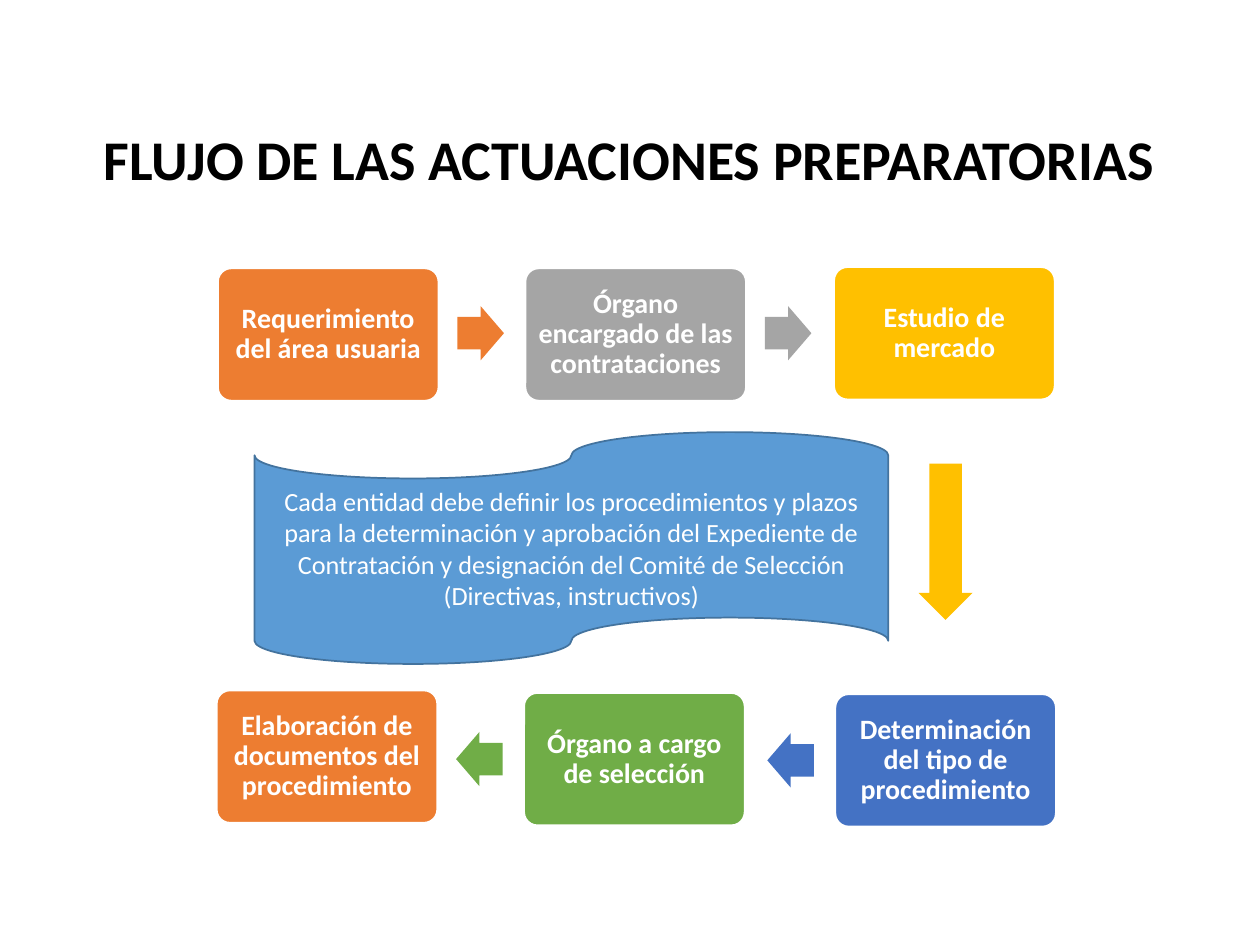
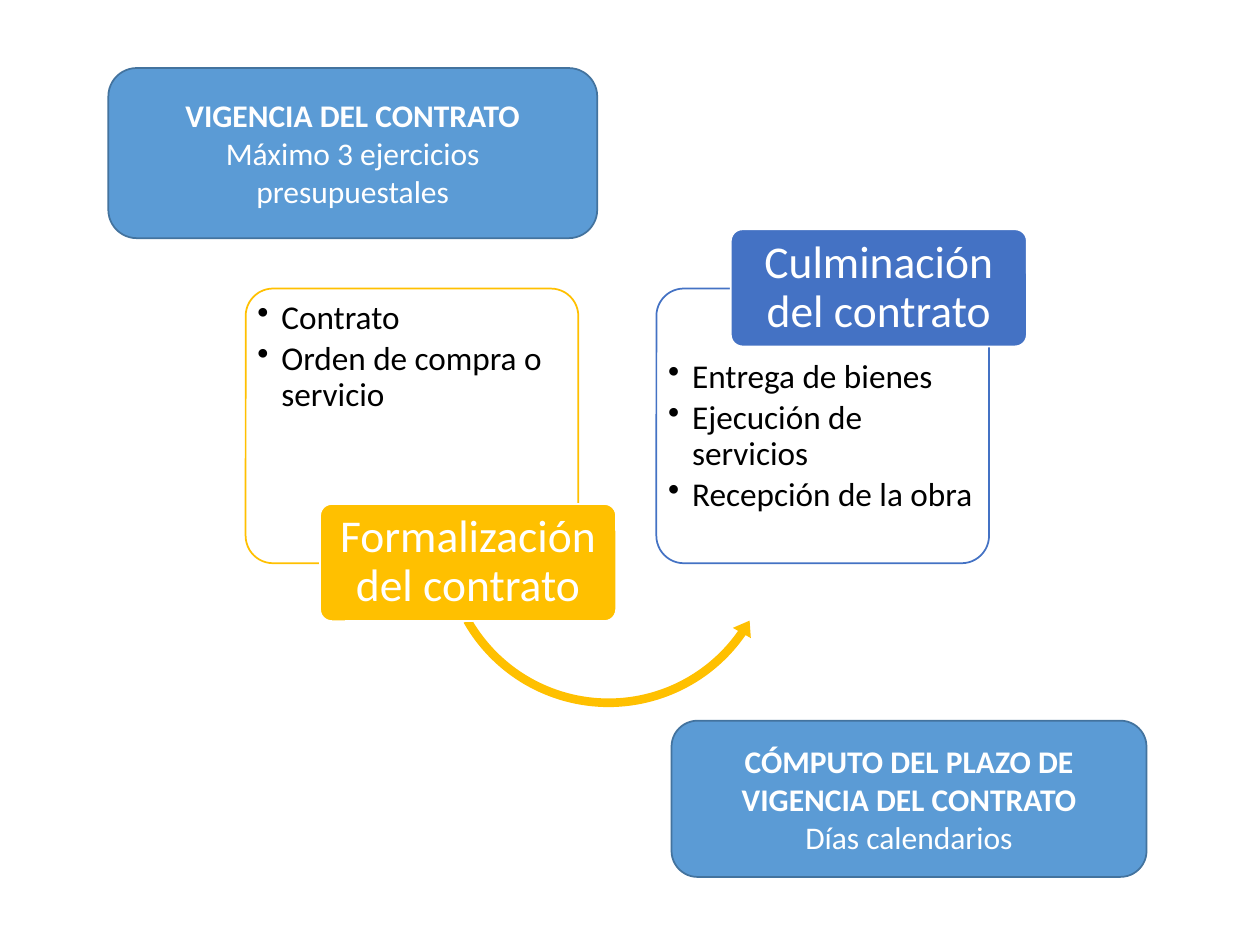
from pptx import Presentation
from pptx.dml.color import RGBColor
from pptx.enum.shapes import MSO_SHAPE
from pptx.enum.text import MSO_ANCHOR, MSO_AUTO_SIZE, PP_ALIGN
from pptx.oxml.ns import qn
from pptx.util import Inches, Pt

FONT = "Calibri"
WHITE, BLACK = "FFFFFF", "000000"
ORANGE, GREY, GOLD = "ED7D31", "A5A5A5", "FFC000"
BLUE, GREEN, SKY, SKY_EDGE = "4472C4", "70AD47", "5B9BD5", "43739E"

TITLE = "FLUJO DE LAS ACTUACIONES PREPARATORIAS"
STEPS = [
    ("Requerimiento del área usuaria", 1.73, 2.13, ORANGE, "right"),
    ("Órgano encargado de las contrataciones", 4.17, 2.13, GREY, "right"),
    ("Estudio de mercado", 6.62, 2.12, GOLD, "down"),
    ("Determinación del tipo de procedimiento", 6.63, 5.51, BLUE, "left"),
    ("Órgano a cargo de selección", 4.16, 5.5, GREEN, "left"),
    ("Elaboración de documentos del procedimiento", 1.72, 5.48, ORANGE, None),
]
ARROWS = {
    "right": (MSO_SHAPE.RIGHT_ARROW, 1.9, 0.3, 0.37, 0.43),
    "left": (MSO_SHAPE.LEFT_ARROW, -0.54, 0.31, 0.37, 0.43),
    "down": (MSO_SHAPE.DOWN_ARROW, 0.67, 1.56, 0.43, 1.24),
}
GUIDELINE = (
    "Cada entidad debe definir los procedimientos y plazos para la "
    "determinación y aprobación del Expediente de Contratación y designación "
    "del Comité de Selección (Directivas, instructivos)"
)

STAGES = [
    {"label": "Formalización del contrato", "color": GOLD, "left": 1.95,
     "label_top": 4, "text_top": 0.03,
     "items": ["Contrato", "Orden de compra o servicio"]},
    {"label": "Culminación del contrato", "color": BLUE, "left": 5.21,
     "label_top": 1.82, "text_top": 0.5,
     "items": ["Entrega de bienes", "Ejecución de servicios", "Recepción de la obra"]},
]
PANEL_TOP, LABEL_SHIFT = 2.29, 0.59
CURVE_PLACE = (3.46, 2.92, 2.74, 2.74)
CURVE_ADJUSTMENTS = (0.025, 3.094, 20.849, 90.245, 0.03)
NOTES = [
    ("CÓMPUTO DEL PLAZO DE VIGENCIA DEL CONTRATO", "Días calendarios",
     (5.33, 5.72, 3.77, 1.24)),
    ("VIGENCIA DEL CONTRATO", "Máximo 3 ejercicios presupuestales",
     (0.86, 0.54, 3.88, 1.35)),
]


def color(value):
    return RGBColor.from_string(value)


def add_block(page, kind, place, fill, edge=None, adjustments=()):
    block = page.shapes.add_shape(kind, *map(Inches, place))
    block.shadow.inherit = False
    block.fill.solid()
    block.fill.fore_color.rgb = color(fill)
    if edge:
        block.line.color.rgb = color(edge)
        block.line.width = Pt(1)
    else:
        block.line.fill.background()
    for index, value in enumerate(adjustments):
        block.adjustments[index] = value
    return block


def write(block, lines, size, ink=WHITE, bold=False, align=PP_ALIGN.CENTER,
          anchor=MSO_ANCHOR.MIDDLE, insets=(0.1, 0.05, 0.1, 0.05), spacing=1):
    frame = block.text_frame
    frame.text = "\n".join(lines)
    frame.word_wrap = True
    frame.auto_size = MSO_AUTO_SIZE.NONE
    frame.vertical_anchor = anchor
    (frame.margin_left, frame.margin_top,
     frame.margin_right, frame.margin_bottom) = map(Inches, insets)
    for para in frame.paragraphs:
        para.alignment = align
        para.line_spacing = spacing
        for span in para.runs:
            span.font.name = FONT
            span.font.size = Pt(size)
            span.font.bold = bold
            span.font.color.rgb = color(ink)
    return frame


def add_bullets(frame):
    for para in frame.paragraphs:
        para.space_after = Pt(3)
        properties = para._p.get_or_add_pPr()
        properties.set("marL", str(Inches(0.19)))
        properties.set("indent", str(Inches(-0.19)))
        bullet = properties.makeelement(qn("a:buChar"), {"char": "•"})
        properties.append(bullet)


def build_flow(deck):
    page = deck.slides.add_slide(deck.slide_layouts[5])
    title = page.shapes.title
    title.left, title.top, title.width, title.height = map(Inches, (0.5, 1.09, 8.99, 0.48))
    write(title, [TITLE], 32, BLACK, True, anchor=MSO_ANCHOR.BOTTOM)
    for label, left, top, fill, direction in STEPS:
        box = add_block(page, MSO_SHAPE.ROUNDED_RECTANGLE,
                        (left, top, 1.75, 1.05), fill, WHITE, [0.1])
        write(box, [label], 16, bold=True, insets=[0.07] * 4, spacing=0.9)
        if direction:
            kind, across, down, width, height = ARROWS[direction]
            add_block(page, kind, (left + across, top + down, width, height),
                      fill, adjustments=(0.6, 0.5))
    tape = add_block(page, MSO_SHAPE.FLOWCHART_PUNCHED_TAPE,
                     (2.02, 3.43, 5.03, 1.84), SKY, SKY_EDGE)
    write(tape, [GUIDELINE], 15)


def build_contract(deck):
    page = deck.slides.add_slide(deck.slide_layouts[6])
    for number, stage in enumerate(STAGES):
        left = stage["left"]
        panel = add_block(page, MSO_SHAPE.ROUNDED_RECTANGLE,
                          (left, PANEL_TOP, 2.64, 2.18), WHITE, stage["color"], [0.1])
        frame = write(panel, stage["items"], 19, BLACK, align=PP_ALIGN.LEFT,
                      anchor=MSO_ANCHOR.TOP,
                      insets=(0.03, stage["text_top"], 0.03, 0.03), spacing=0.9)
        add_bullets(frame)
        if number == 0:
            add_block(page, MSO_SHAPE.LEFT_CIRCULAR_ARROW, CURVE_PLACE,
                      stage["color"], adjustments=CURVE_ADJUSTMENTS)
        label = add_block(page, MSO_SHAPE.ROUNDED_RECTANGLE,
                          (left + LABEL_SHIFT, stage["label_top"], 2.35, 0.93),
                          stage["color"], WHITE, [0.1])
        write(label, [stage["label"]], 26, insets=(0.05, 0.04, 0.05, 0.04), spacing=0.9)
    for heading, detail, place in NOTES:
        note = add_block(page, MSO_SHAPE.ROUNDED_RECTANGLE, place, SKY, SKY_EDGE)
        frame = write(note, [heading, detail], 18)
        frame.paragraphs[0].runs[0].font.bold = True


def main():
    deck = Presentation()
    deck.slide_width, deck.slide_height = Inches(10), Inches(7.5)
    build_flow(deck)
    build_contract(deck)
    deck.save("out.pptx")


if __name__ == "__main__":
    main()
